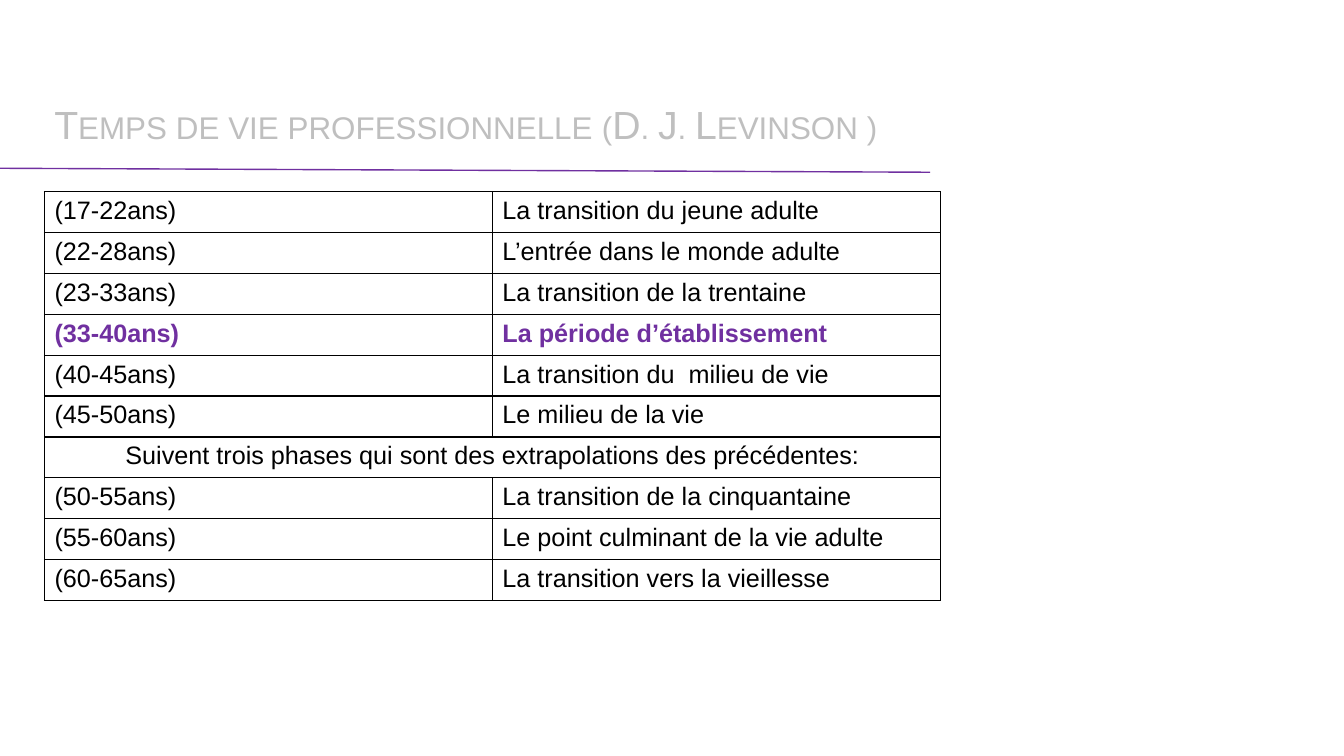
from lxml import etree
from pptx import Presentation
from pptx.dml.color import RGBColor
from pptx.enum.shapes import MSO_CONNECTOR
from pptx.enum.text import MSO_ANCHOR, PP_ALIGN
from pptx.oxml.ns import qn
from pptx.util import Cm, Pt

STRAIGHT = MSO_CONNECTOR.STRAIGHT
BOTTOM = MSO_ANCHOR.BOTTOM
LEFT, CENTER = PP_ALIGN.LEFT, PP_ALIGN.CENTER
FONT = "Arial"
BLACK, GREY, PURPLE = "000000", "BFBFBF", "7030A0"
SPAN = "Suivent trois phases qui sont des extrapolations des précédentes:"
KEY = "(33-40ans)"
STAGES = [
    ("(17-22ans)", "La transition du jeune adulte"),
    ("(22-28ans)", "L’entrée dans le monde adulte"),
    ("(23-33ans)", "La transition de la trentaine"),
    (KEY, "La période d’établissement"),
    ("(40-45ans)", "La transition du  milieu de vie"),
    ("(45-50ans)", "Le milieu de la vie"),
    (SPAN,),
    ("(50-55ans)", "La transition de la cinquantaine"),
    ("(55-60ans)", "Le point culminant de la vie adulte"),
    ("(60-65ans)", "La transition vers la vieillesse"),
]


def color(value):
    """Turn a hex string into a colour."""
    return RGBColor.from_string(value)


def add_run(para, text, size, tint, bold=False):
    """Add one styled run to a paragraph and return it."""
    run = para.add_run()
    run.text = text
    run.font.name = FONT
    run.font.size = Pt(size)
    run.font.bold = bold
    run.font.color.rgb = color(tint)
    return run


def add_title(slide, text):
    """Add the title in small capitals."""
    box = slide.shapes.add_textbox(Cm(1.12), Cm(1.96), Cm(22.58), Cm(1.88))
    frame = box.text_frame
    frame.word_wrap = True
    frame.vertical_anchor = BOTTOM
    para = frame.paragraphs[0]
    para.line_spacing = 1.1
    run = add_run(para, text, 28, GREY)
    run.font._element.set("cap", "small")


def add_rule(slide):
    """Draw the thin rule below the title."""
    rule = slide.shapes.add_connector(STRAIGHT, 0, Cm(4.24), Cm(23.44), Cm(4.34))
    rule.line.color.rgb = color(PURPLE)
    rule.line.width = Pt(1)
    etree.SubElement(rule._element.spPr, qn("a:effectLst"))


def add_frame(cell):
    """Clear the fill of a cell and give it four black borders."""
    cell.fill.background()
    props = cell._tc.get_or_add_tcPr()
    for spot, side in enumerate(("lnL", "lnR", "lnT", "lnB")):
        edge = etree.Element(qn("a:" + side), w=str(Pt(1)))
        fill = etree.SubElement(edge, qn("a:solidFill"))
        etree.SubElement(fill, qn("a:srgbClr"), val=BLACK)
        props.insert(spot, edge)


def add_stages(slide):
    """Add the table of life stages."""
    count = len(STAGES)
    table = slide.shapes.add_table(
        count, 2, Cm(1.12), Cm(4.83), Cm(22.58), Cm(1.03) * count
    ).table
    for line, texts in enumerate(STAGES):
        for col in range(2):
            add_frame(table.cell(line, col))
        wide = len(texts) == 1
        if wide:
            table.cell(line, 0).merge(table.cell(line, 1))
        bold = texts[0] == KEY
        for col, text in enumerate(texts):
            para = table.cell(line, col).text_frame.paragraphs[0]
            para.alignment = CENTER if wide else LEFT
            add_run(para, text, 18, PURPLE if bold else BLACK, bold)


def main():
    """Build the slide and save it."""
    deck = Presentation()
    deck.slide_width, deck.slide_height = Cm(33.87), Cm(19.05)
    slide = deck.slides.add_slide(deck.slide_layouts[6])
    add_rule(slide)
    add_title(slide, "Temps de vie professionnelle (D. J. Levinson )")
    add_stages(slide)
    deck.save("out.pptx")


if __name__ == "__main__":
    main()
